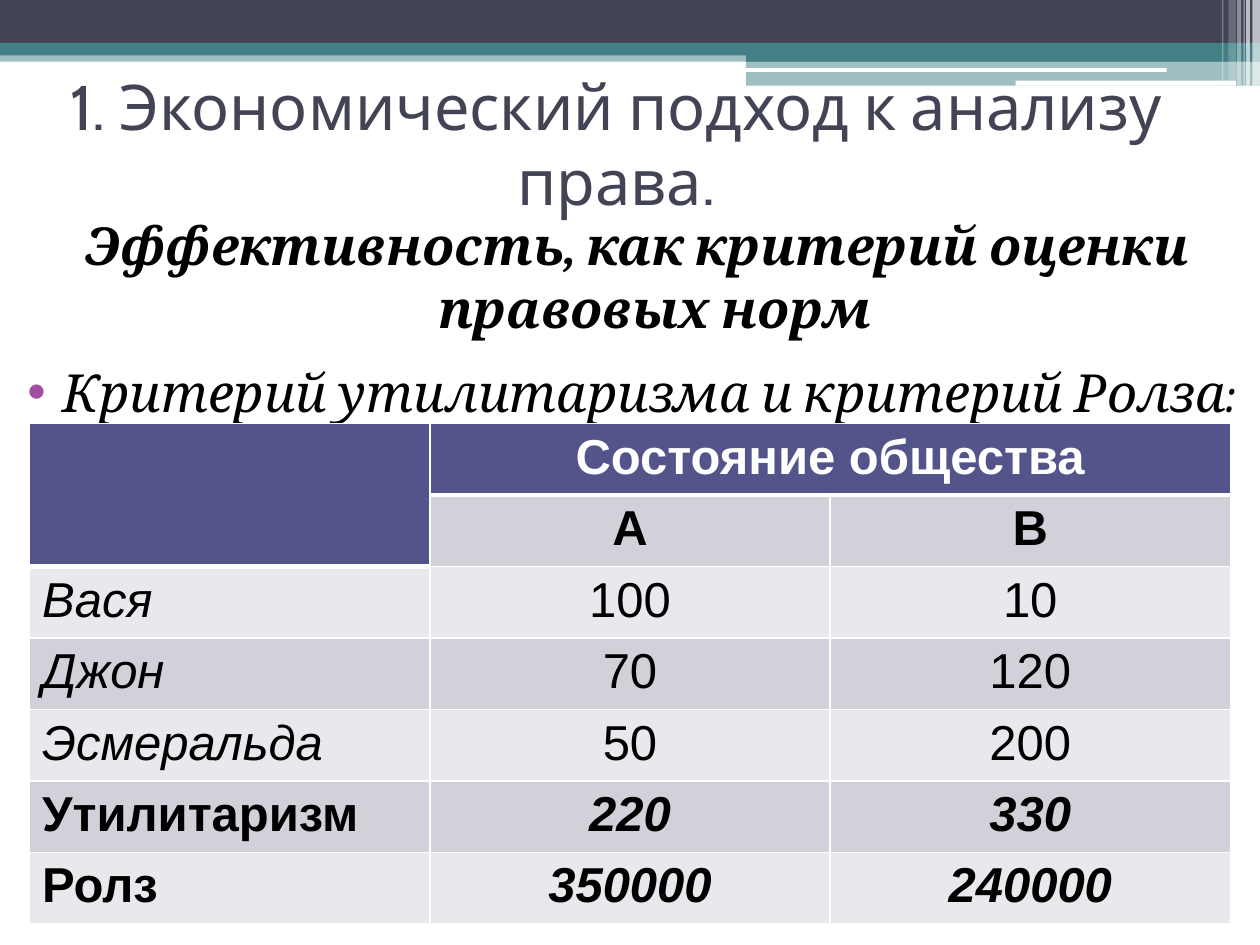
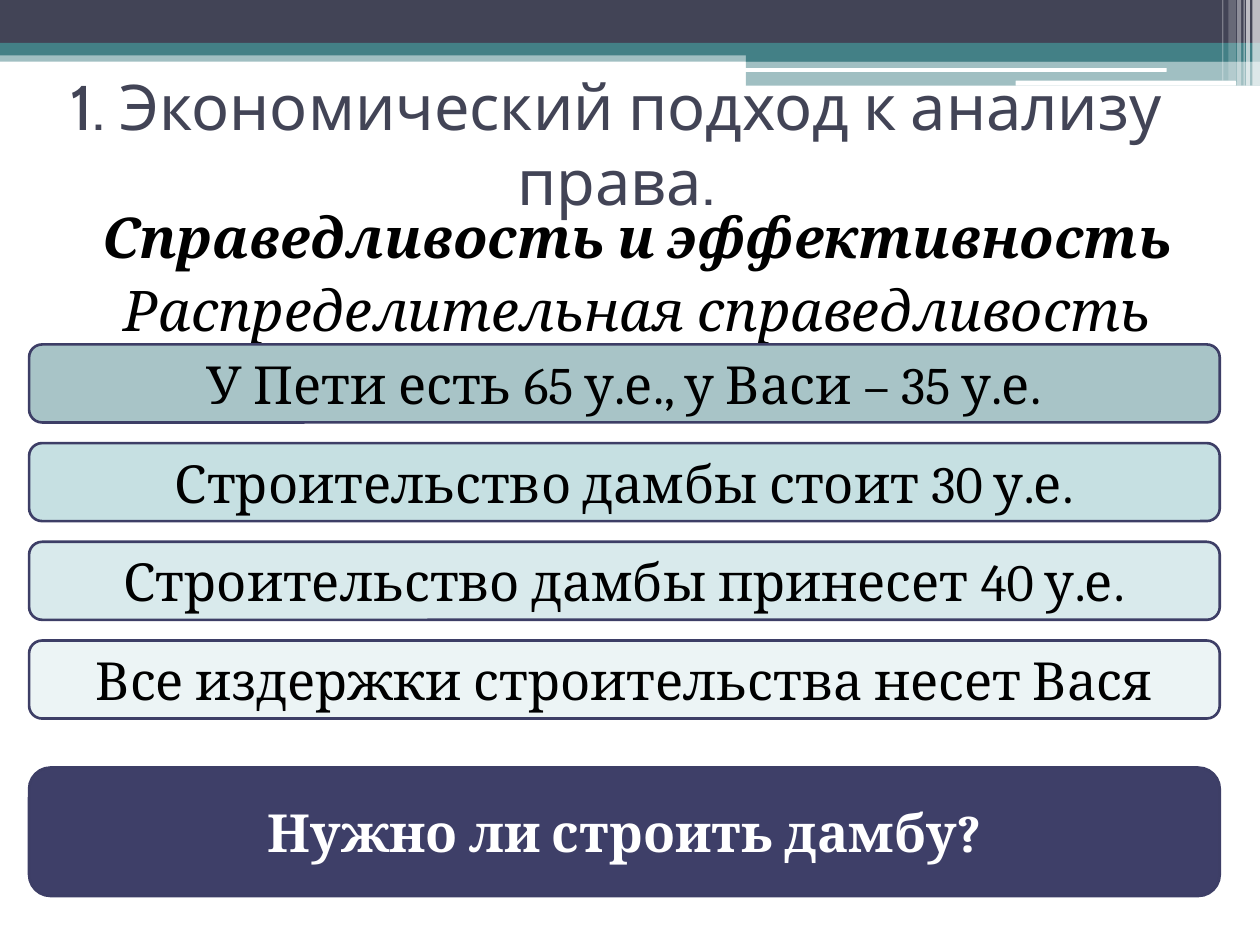
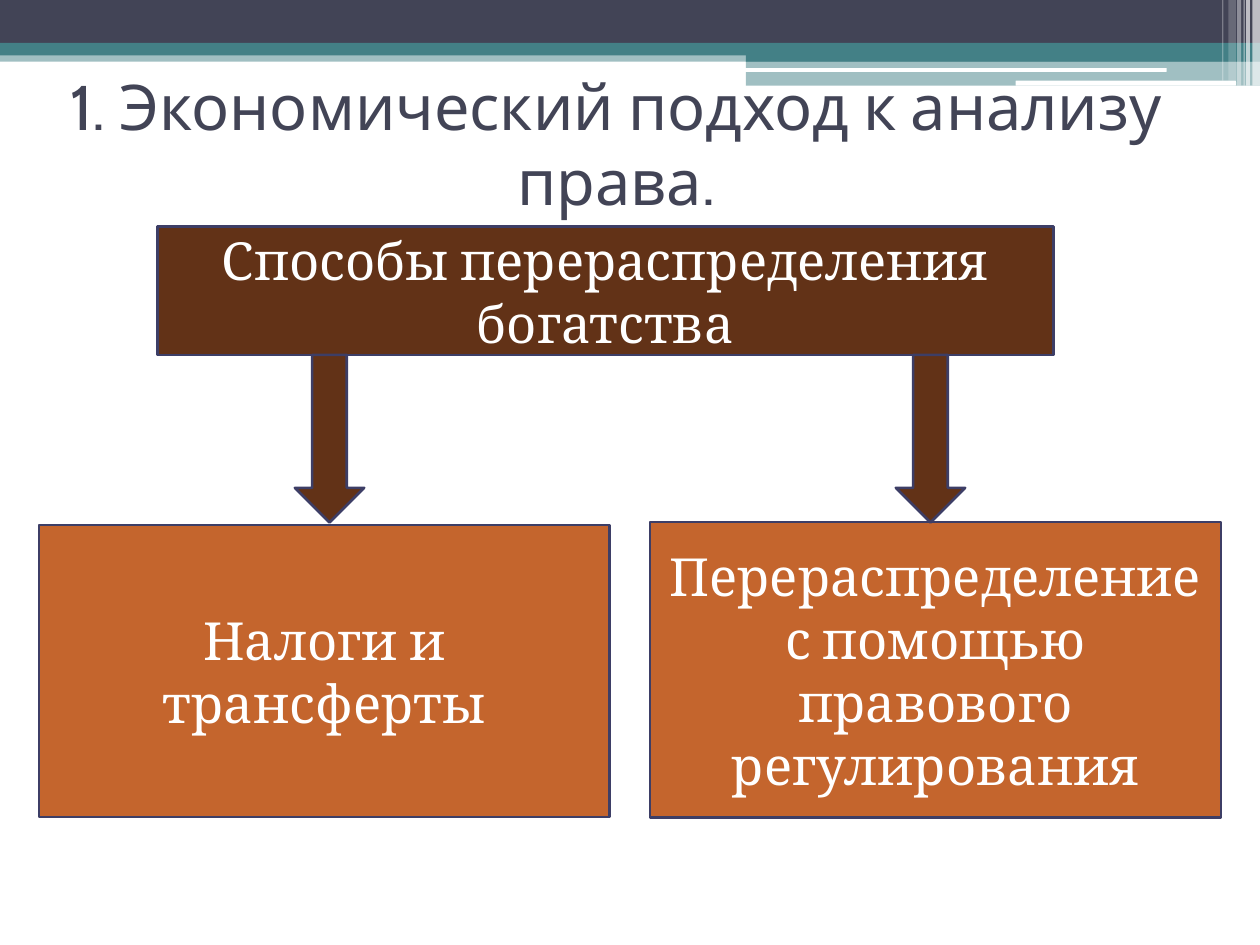
from lxml.etree import SubElement
from pptx import Presentation
from pptx.dml.color import RGBColor
from pptx.enum.shapes import MSO_SHAPE
from pptx.enum.text import MSO_ANCHOR, MSO_AUTO_SIZE, PP_ALIGN
from pptx.oxml.ns import qn
from pptx.util import Pt

COLORS = {
    "white": "FFFFFF", "black": "000000", "slate": "424456", "teal": "438086",
    "outline": "3D3E66", "navy": "3E3F68", "bullet": "A04DA3",
    "table_head": "53548A", "table_dark": "D1D1DA", "table_light": "E9E9ED",
    "teal_mid": "83BCC1", "teal_soft": "ADD2D6", "teal_pale": "D6E9EA",
    "brown": "623217", "orange": "C4652D",
}
TITLE = "1. Экономический подход к анализу права."
TITLE_BOX = (28.1, 39.6, 648, 84.2)

# left, top, width, height, colour, opacity in percent
BANDS = [
    (0, 28.8, 720, 6.5, "teal", 50),
    (0, 0, 720, 24.5, "slate", 100),
    (0, 24.5, 720, 7.2, "teal", 100),
    (426.2, 28.1, 293.8, 7.2, "teal", 100),
    (426.2, 34.6, 293.8, 14.4, "teal", 50),
]
ROUNDED_BARS = [
    (425.5, 38.9, 241.2, 2.2, "white", 100),
    (580.3, 46.1, 126, 2.9, "white", 100),
]
STRIPES = [
    (715.7, 0, 4.3, 49, "white", 65),
    (712.1, 0, 2.2, 49, "white", 65),
    (710.6, 0, 0.7, 49, "white", 60),
    (707, 0, 2.2, 49, "white", 40),
    (702, 0, 4.3, 46.1, "white", 20),
    (698.4, 0, 0.7, 46.1, "white", 30),
]
WELFARE_ROWS = [
    ("", "Состояние общества", ""),
    ("", "А", "В"),
    ("Вася", "100", "10"),
    ("Джон", "70", "120"),
    ("Эсмеральда", "50", "200"),
    ("Утилитаризм", "220", "330"),
    ("Ролз", "350000", "240000"),
]
DAM_FACTS = [
    ("У Пети есть 65 у.е., у Васи – 35 у.е.", "teal"),
    ("Строительство дамбы стоит 30 у.е.", "teal_mid"),
    ("Строительство дамбы принесет 40 у.е.", "teal_soft"),
    ("Все издержки строительства несет Вася", "teal_pale"),
]


def rgb(name):
    return RGBColor.from_string(COLORS[name])


def points(box):
    return [Pt(value) for value in box]


def write(para, text, size=30, font="Cambria", color="black", bold=False,
          italic=False, align=PP_ALIGN.CENTER, before=0):
    para.alignment = align
    para.space_before = Pt(before)
    span = para.add_run()
    span.text = text
    span.font.name = font
    span.font.size = Pt(size)
    span.font.bold = bold
    span.font.italic = italic
    span.font.color.rgb = rgb(color)


def add_block(page, box, fill, kind=MSO_SHAPE.RECTANGLE, opacity=100,
              outlined=True, text="", **style):
    shape = page.shapes.add_shape(kind, *points(box))
    shape.shadow.inherit = False
    shape.fill.solid()
    shape.fill.fore_color.rgb = rgb(fill)
    if opacity < 100:
        tint = shape._element.spPr.find(".//" + qn("a:srgbClr"))
        SubElement(tint, qn("a:alpha"), val=str(opacity * 1000))
    if outlined:
        shape.line.color.rgb = rgb("outline")
        shape.line.width = Pt(1.5)
    else:
        shape.line.fill.background()
    if text:
        shape.text_frame.word_wrap = True
        shape.text_frame.vertical_anchor = MSO_ANCHOR.MIDDLE
        write(shape.text_frame.paragraphs[0], text, **style)
    return shape


def add_header_to_layout(page):
    """Draw the header decoration and move it to the layout all pages share."""
    tree = page.slide_layout.shapes._spTree
    groups = [(MSO_SHAPE.RECTANGLE, BANDS),
              (MSO_SHAPE.ROUNDED_RECTANGLE, ROUNDED_BARS),
              (MSO_SHAPE.RECTANGLE, STRIPES)]
    number = 100
    for kind, parts in groups:
        for *box, color, opacity in parts:
            shape = add_block(page, box, color, kind, opacity, outlined=False)
            shape._element.nvSpPr.cNvPr.set("id", str(number))
            tree.append(shape._element)
            number += 1


def add_page(deck):
    page = deck.slides.add_slide(deck.slide_layouts[5])
    title = page.shapes.title
    title.left, title.top, title.width, title.height = points(TITLE_BOX)
    frame = title.text_frame
    frame.auto_size = MSO_AUTO_SIZE.NONE
    frame.vertical_anchor = MSO_ANCHOR.MIDDLE
    write(frame.paragraphs[0], TITLE, size=36, font="Cabin", color="slate")
    return page


def add_body(page, box, lines):
    """Add hanging paragraphs; each line is (text, has bullet, style)."""
    frame = page.shapes.add_textbox(*points(box)).text_frame
    frame.word_wrap = True
    for index, (text, bulleted, style) in enumerate(lines):
        para = frame.add_paragraph() if index else frame.paragraphs[0]
        write(para, text, italic=True, **style)
        props = para._p.get_or_add_pPr()
        props.set("marL", str(Pt(28.8)))
        props.set("indent", str(Pt(-20.2)))
        if bulleted:
            color = SubElement(props, qn("a:buClr"))
            SubElement(color, qn("a:srgbClr"), val=COLORS["bullet"])
            SubElement(props, qn("a:buFont"), typeface="Arial")
            SubElement(props, qn("a:buChar"), char="•")
        else:
            SubElement(props, qn("a:buNone"))


def set_borders(cell, bottom):
    props = cell._tc.get_or_add_tcPr()
    for side, width in (("L", 1), ("R", 1), ("T", 1), ("B", bottom)):
        line = SubElement(props, qn("a:ln" + side), w=str(Pt(width)))
        fill = SubElement(line, qn("a:solidFill"))
        SubElement(fill, qn("a:srgbClr"), val=COLORS["white"])


def add_welfare_table(page, box):
    rows, columns = len(WELFARE_ROWS), len(WELFARE_ROWS[0])
    table = page.shapes.add_table(rows, columns, *points(box)).table
    for r, texts in enumerate(WELFARE_ROWS):
        for c, text in enumerate(texts):
            cell = table.cell(r, c)
            header = r == 0 or (r == 1 and c == 0)
            band = "table_dark" if r % 2 else "table_light"
            set_borders(cell, bottom=3 if header else 1)
            cell.fill.solid()
            cell.fill.fore_color.rgb = rgb("table_head" if header else band)
            if text:
                total = r >= rows - 2
                write(cell.text_frame.paragraphs[0], text, size=28, font="Arial",
                      color="white" if header else "black",
                      bold=r < 2 or total,
                      italic=r > 1 and (c > 0) == total,
                      align=PP_ALIGN.CENTER if c else PP_ALIGN.LEFT)
    table.cell(0, 0).merge(table.cell(1, 0))
    table.cell(0, 1).merge(table.cell(0, 2))


def add_dam_question(page, box):
    left, top, width, height = box
    for index, (text, color) in enumerate(DAM_FACTS):
        add_block(page, (left, top + index * 56.4, width, 44.6), color,
                  MSO_SHAPE.ROUNDED_RECTANGLE, opacity=46, text=text)
    question_height = 73.4
    add_block(page, (left, top + height - question_height, width, question_height),
              "navy", MSO_SHAPE.ROUNDED_RECTANGLE,
              text="Нужно ли строить дамбу?", color="white", bold=True)


def add_redistribution_tree(page, box):
    left, top, width, height = box
    root_height, leaf_width, arrow_height = 73.4, 326.2, 95.8
    add_block(page, (left + 67.7, top, 512, root_height), "brown",
              text="Способы перераспределения богатства", color="white")
    leaves = [
        (0, 167, "Налоги и трансферты"),
        (width - leaf_width, 168.8,
         "Перераспределение с помощью правового регулирования"),
    ]
    for offset, leaf_height, text in leaves:
        add_block(page, (left + offset, top + height - leaf_height,
                         leaf_width, leaf_height),
                  "orange", text=text, color="white")
    for offset in (146.2, 489.6):
        add_block(page, (left + offset, top + root_height, 39.6, arrow_height),
                  "brown", MSO_SHAPE.DOWN_ARROW)


def main():
    deck = Presentation()
    deck.slide_width, deck.slide_height = Pt(720), Pt(540)

    page = add_page(deck)
    add_header_to_layout(page)
    add_body(page, (0, 118.1, 720, 421.9), [
        ("Эффективность, как критерий оценки правовых норм", False,
         {"bold": True, "before": 3}),
        ("Критерий утилитаризма и критерий Ролза:", True,
         {"align": PP_ALIGN.LEFT, "before": 12}),
    ])
    add_welfare_table(page, (16.9, 242, 686.2, 257))

    page = add_page(deck)
    add_body(page, (0, 112.3, 720, 421.9), [
        ("Справедливость и эффективность", False,
         {"size": 32, "bold": True, "before": 3}),
        ("Распределительная справедливость", False, {"size": 32, "before": 3}),
    ])
    add_dam_question(page, (16.6, 196.8, 680.4, 315.2))

    page = add_page(deck)
    add_redistribution_tree(page, (22.3, 129.4, 675.4, 337.6))

    deck.save("out.pptx")


if __name__ == "__main__":
    main()
